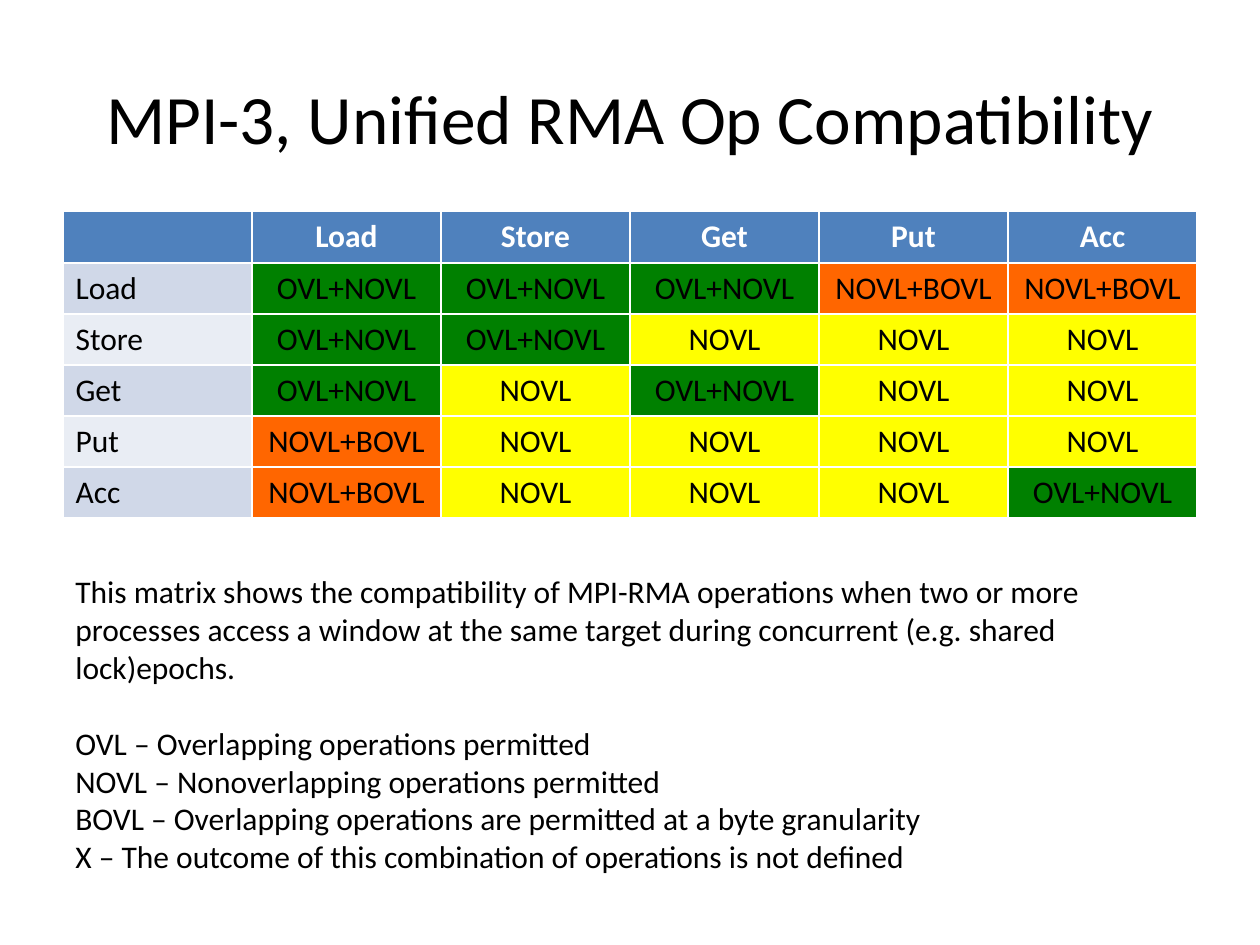
from dataclasses import dataclass

from pptx import Presentation
from pptx.dml.color import RGBColor
from pptx.enum.text import MSO_ANCHOR, MSO_AUTO_SIZE as AutoSize, PP_ALIGN
from pptx.util import Emu, Pt

EMU_PER_PX = 9144
FONT = "Calibri"
BLACK = RGBColor(0x00, 0x00, 0x00)
WHITE = RGBColor(0xFF, 0xFF, 0xFF)
BLUE = RGBColor(0x4F, 0x81, 0xBD)
BAND_DARK = RGBColor(0xD0, 0xD8, 0xE8)
BAND_LIGHT = RGBColor(0xE9, 0xED, 0xF4)
GREEN = RGBColor(0x00, 0x80, 0x00)
YELLOW = RGBColor(0xFF, 0xFF, 0x00)
ORANGE = RGBColor(0xFF, 0x66, 0x00)


@dataclass(frozen=True)
class Entry:
    text: str
    fill: RGBColor
    color: RGBColor = BLACK
    bold: bool = False
    align: PP_ALIGN = PP_ALIGN.CENTER


BOTH = Entry("OVL+NOVL", GREEN)
NOVL = Entry("NOVL", YELLOW)
BYTE = Entry("NOVL+BOVL", ORANGE)

OPS = ["Load", "Store", "Get", "Put", "Acc"]
COMPATIBILITY = [
    [BOTH, BOTH, BOTH, BYTE, BYTE],
    [BOTH, BOTH, NOVL, NOVL, NOVL],
    [BOTH, NOVL, BOTH, NOVL, NOVL],
    [BYTE, NOVL, NOVL, NOVL, NOVL],
    [BYTE, NOVL, NOVL, NOVL, BOTH],
]
INTRO = (
    "This matrix shows the compatibility of MPI-RMA operations when two or more "
    "processes access a window at the same target during concurrent "
    "(e.g. shared lock)epochs."
)
LEGEND = [
    "OVL – Overlapping operations permitted",
    "NOVL – Nonoverlapping operations permitted",
    "BOVL – Overlapping operations are permitted at a byte granularity",
    "X – The outcome of this combination of operations is not defined",
]


def px(n: int) -> Emu:
    return Emu(n * EMU_PER_PX)


def style(p, size: float, color: RGBColor, bold: bool = False) -> None:
    p.font.name = FONT
    p.font.size = Pt(size)
    p.font.color.rgb = color
    p.font.bold = bold


def add_title(s, text: str) -> None:
    sp = s.shapes.title
    sp.left, sp.top, sp.width, sp.height = px(50), px(30), px(900), px(125)
    tf = sp.text_frame
    tf.text = text
    tf.auto_size = AutoSize.NONE
    tf.vertical_anchor = MSO_ANCHOR.MIDDLE
    p = tf.paragraphs[0]
    p.alignment = PP_ALIGN.CENTER
    style(p, 39.6, BLACK)


def fill_cell(cell, entry: Entry) -> None:
    cell.fill.solid()
    cell.fill.fore_color.rgb = entry.fill
    cell.text = entry.text
    p = cell.text_frame.paragraphs[0]
    p.alignment = entry.align
    style(p, 18, entry.color, entry.bold)


def add_matrix(s) -> None:
    rows = [[Entry(op, BLUE, WHITE, True) for op in ["", *OPS]]]
    for i, (op, entries) in enumerate(zip(OPS, COMPATIBILITY)):
        band = BAND_LIGHT if i % 2 else BAND_DARK
        rows.append([Entry(op, band, align=PP_ALIGN.LEFT), *entries])
    n = len(rows)
    table = s.shapes.add_table(n, n, px(50), px(168), px(900), px(243)).table
    for r, entries in enumerate(rows):
        for c, entry in enumerate(entries):
            fill_cell(table.cell(r, c), entry)


def add_explanation(s) -> None:
    sp = s.shapes.add_textbox(px(50), px(449), px(900), px(252))
    tf = sp.text_frame
    tf.word_wrap = True
    tf.auto_size = AutoSize.SHAPE_TO_FIT_TEXT
    tf.text = "\n".join([INTRO, *LEGEND])
    for p in tf.paragraphs:
        style(p, 18, BLACK)
    tf.paragraphs[1].space_before = Pt(22)


def main() -> None:
    prs = Presentation()
    prs.slide_width, prs.slide_height = px(1000), px(750)
    s = prs.slides.add_slide(prs.slide_layouts[5])
    add_title(s, "MPI-3, Unified RMA Op Compatibility")
    add_matrix(s)
    add_explanation(s)
    prs.save("out.pptx")


if __name__ == "__main__":
    main()
